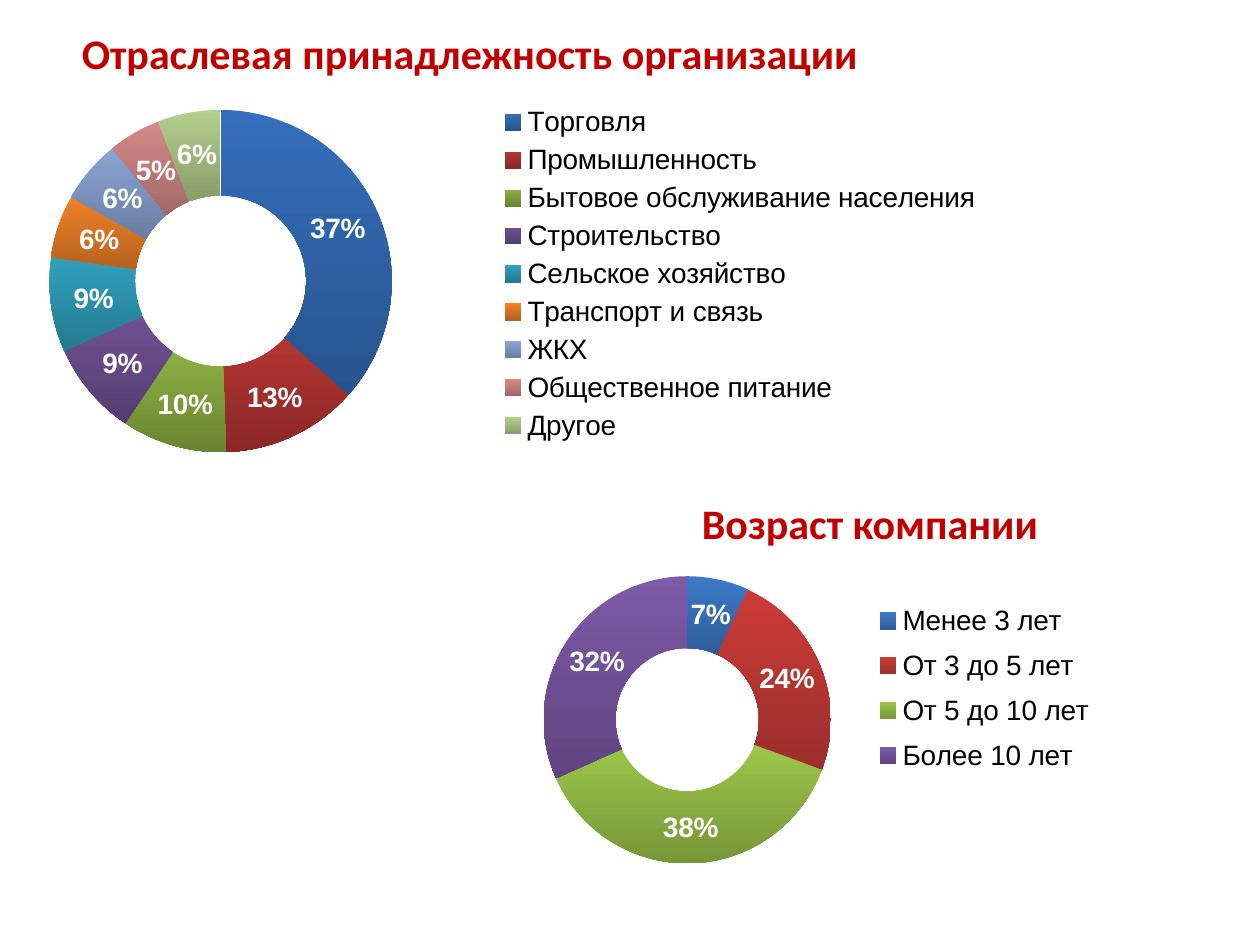
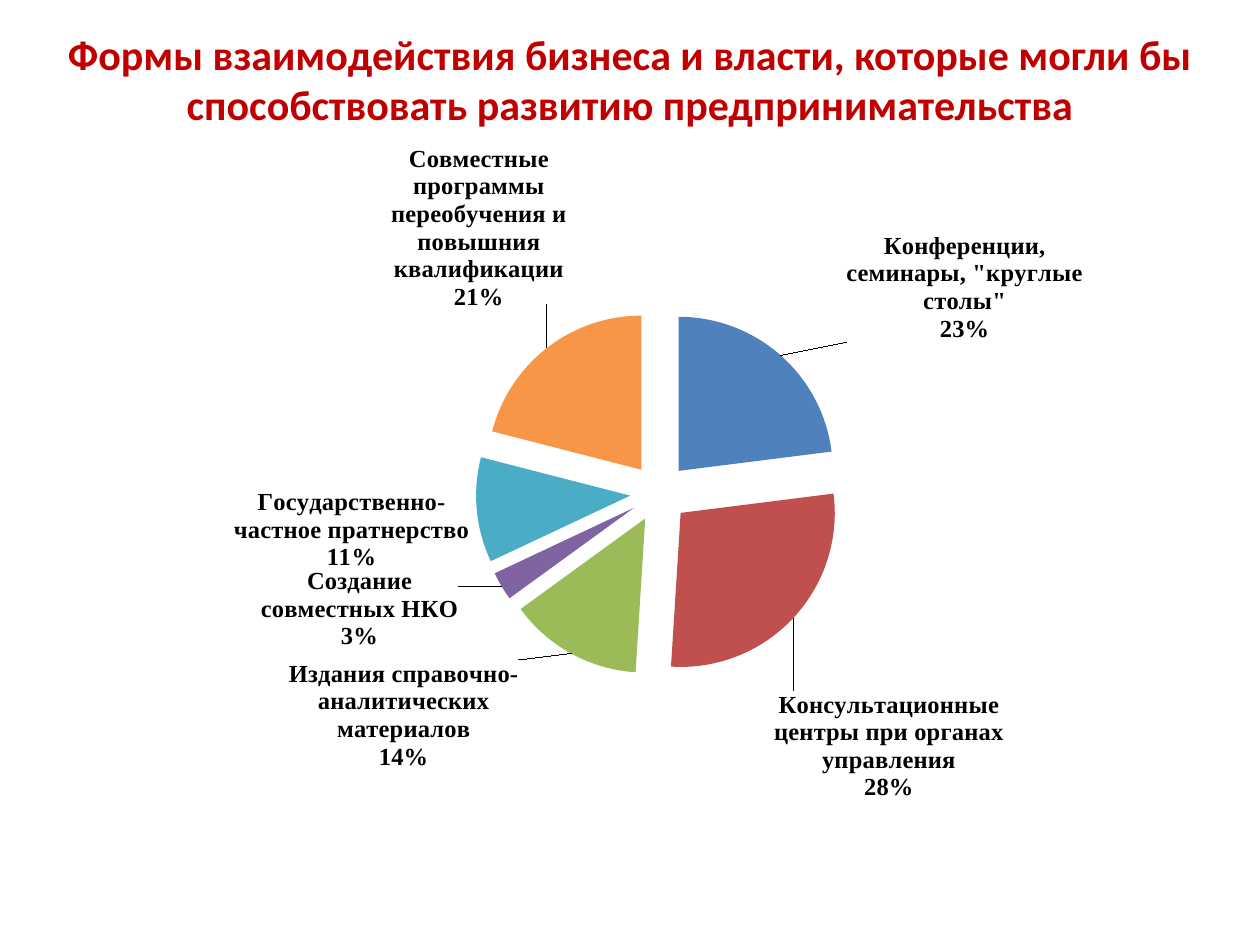
from dataclasses import dataclass

from lxml.etree import SubElement
from pptx import Presentation
from pptx.chart.data import CategoryChartData
from pptx.dml.color import RGBColor
from pptx.enum.chart import XL_CHART_TYPE as ChartType
from pptx.enum.chart import XL_LABEL_POSITION as LabelPosition
from pptx.enum.chart import XL_LEGEND_POSITION as LegendPosition
from pptx.enum.text import MSO_ANCHOR, PP_ALIGN
from pptx.oxml.ns import qn
from pptx.util import Inches, Pt

TITLE_RED = RGBColor(0xC0, 0x00, 0x00)
BLACK = RGBColor(0x00, 0x00, 0x00)
WHITE = RGBColor(0xFF, 0xFF, 0xFF)

INDUSTRY_COLORS = [
    RGBColor(0x35, 0x6E, 0xBB), RGBColor(0xB4, 0x35, 0x32), RGBColor(0x8C, 0xAF, 0x41),
    RGBColor(0x6F, 0x51, 0x94), RGBColor(0x31, 0xA0, 0xBD), RGBColor(0xF0, 0x81, 0x28),
    RGBColor(0x8A, 0xA5, 0xD4), RGBColor(0xD4, 0x8A, 0x88), RGBColor(0xB4, 0xCE, 0x8C),
]
AGE_COLORS = [
    RGBColor(0x3C, 0x7A, 0xC9), RGBColor(0xCC, 0x3C, 0x38),
    RGBColor(0x9C, 0xC6, 0x4A), RGBColor(0x7E, 0x5A, 0xA8),
]
FORM_COLORS = [
    RGBColor(0x4F, 0x81, 0xBD), RGBColor(0xC0, 0x50, 0x4D), RGBColor(0x9B, 0xBB, 0x59),
    RGBColor(0x80, 0x64, 0xA2), RGBColor(0x4B, 0xAC, 0xC6), RGBColor(0xF7, 0x96, 0x46),
]
GRADIENT_SHADE = 0.76  # brightness at the bottom of a ring slice


@dataclass
class Box:
    left: float
    top: float
    width: float
    height: float

    def lengths(self):
        return [Inches(v) for v in (self.left, self.top, self.width, self.height)]

    def fractions(self):
        return dict(x=self.left, y=self.top, w=self.width, h=self.height)


@dataclass
class Ring:
    box: Box
    plot: Box
    legend: Box
    shares: dict[str, int]
    colors: list[RGBColor]


@dataclass
class Form:
    name: str
    share: int
    label_shift: tuple[float, float]


INDUSTRY = Ring(
    Box(0.12, 0.76, 9.06, 2.83), Box(0.02, 0.04, 0.32, 0.96), Box(0.41, 0.01, 0.45, 0.98),
    {"Торговля": 37, "Промышленность": 13, "Бытовое обслуживание населения": 10,
     "Строительство": 9, "Сельское хозяйство": 9, "Транспорт и связь": 6,
     "ЖКХ": 6, "Общественное питание": 5, "Другое": 6},
    INDUSTRY_COLORS,
)
AGE = Ring(
    Box(1.42, 4.1, 7.99, 2.96), Box(0.36, 0.16, 0.29, 0.77), Box(0.68, 0.2, 0.24, 0.52),
    {"Менее 3 лет": 7, "От 3 до 5 лет": 24, "От 5 до 10 лет": 38, "Более 10 лет": 32},
    AGE_COLORS,
)
FORMS = [
    Form('Конференции, семинары, "круглые столы"', 23, (0.05, -0.01)),
    Form("Консультационные центры при органах управления", 28, (-0.02, 0.09)),
    Form("Издания справочно-аналитических материалов", 14, (-0.04, 0)),
    Form("Создание совместных НКО", 3, (-0.03, -0.03)),
    Form("Государственно-частное пратнерство", 11, (0, -0.03)),
    Form("Совместные программы переобучения и повышния квалификации", 21, (0.02, -0.05)),
]


def add_title(slide, text: str, box: Box) -> None:
    frame = slide.shapes.add_textbox(*box.lengths()).text_frame
    frame.word_wrap = True
    frame.vertical_anchor = MSO_ANCHOR.MIDDLE
    paragraph = frame.paragraphs[0]
    paragraph.alignment = PP_ALIGN.CENTER
    run = paragraph.add_run()
    run.text = text
    style_font(run.font, 24, "Calibri", TITLE_RED, bold=True)


def style_font(font, size: int, name: str, color: RGBColor, bold: bool = False) -> None:
    font.size = Pt(size)
    font.name = name
    font.bold = bold
    font.color.rgb = color


def set_layout(parent, index: int, values: dict[str, float], inner: bool = False,
               absolute: bool = True) -> None:
    """Place a chart part by fractions of the chart area."""
    for old in parent.findall(qn("c:layout")):
        parent.remove(old)
    layout = SubElement(parent, qn("c:layout"))
    parent.insert(index, layout)
    manual = SubElement(layout, qn("c:manualLayout"))
    if inner:
        SubElement(manual, qn("c:layoutTarget")).set("val", "inner")
    if absolute:
        for mode in ("xMode", "yMode"):
            SubElement(manual, qn(f"c:{mode}")).set("val", "edge")
    for key, value in values.items():
        SubElement(manual, qn(f"c:{key}")).set("val", str(value))


def add_share_chart(slide, kind: ChartType, box: Box, plot: Box, shares: dict[str, int]):
    data = CategoryChartData()
    data.categories = list(shares)
    data.add_series("Series 1", list(shares.values()))
    chart = slide.shapes.add_chart(kind, *box.lengths(), data).chart
    chart.has_title = False
    chart.has_legend = False
    chart.plots[0].vary_by_categories = True
    plot_area = chart.plots[0]._element.getparent()
    set_layout(plot_area, 0, plot.fractions(), inner=True)
    return chart


def show_percent(labels) -> None:
    labels.show_value = False
    labels.show_percentage = True
    labels.number_format = "0%"
    labels.number_format_is_linked = False


def darken(color: RGBColor) -> RGBColor:
    return RGBColor(*(round(channel * GRADIENT_SHADE) for channel in color))


def add_ring(slide, ring: Ring) -> None:
    chart = add_share_chart(slide, ChartType.DOUGHNUT, ring.box, ring.plot, ring.shares)
    style_font(chart.font, 16, "Arial", BLACK)
    chart.has_legend = True
    chart.legend.position = LegendPosition.RIGHT
    chart.legend.include_in_layout = False
    set_layout(chart.legend._element, 1, ring.legend.fractions())

    series = chart.plots[0].series[0]
    for index, color in enumerate(ring.colors):
        slice_format = series.points[index].format
        slice_format.line.fill.background()
        fill = slice_format.fill
        fill.gradient()
        fill.gradient_angle = 270
        for stop, stop_color in zip(fill.gradient_stops, (color, darken(color))):
            stop.color.rgb = stop_color
    show_percent(series.data_labels)
    style_font(series.data_labels.font, 16, "Arial", WHITE, bold=True)


def add_forms_pie(slide) -> None:
    shares = {form.name: form.share for form in FORMS}
    chart = add_share_chart(slide, ChartType.PIE, Box(0.2, 1.15, 9.68, 5.94),
                            Box(0.27, 0.22, 0.5, 0.49), shares)
    style_font(chart.font, 18, "Calibri", BLACK)
    series = chart.plots[0].series[0]

    # Slices and their label text
    for index, color in enumerate(FORM_COLORS):
        point = series.points[index]
        point.format.fill.solid()
        point.format.fill.fore_color.rgb = color
        point.format.line.fill.background()
        point.data_label.position = LabelPosition.OUTSIDE_END
        style_font(point.data_label.font, 14, "Times New Roman", BLACK, bold=True)
    labels = series.data_labels
    show_percent(labels)
    labels.show_category_name = True
    labels.position = LabelPosition.OUTSIDE_END
    style_font(labels.font, 14, "Times New Roman", BLACK, bold=True)

    # Label contents and shifts from the default places
    for form, label in zip(FORMS, series._element.iter(qn("c:dLbl"))):
        set_layout(label, 1, dict(zip("xy", form.label_shift)), absolute=False)
        label.find(qn("c:showVal")).set("val", "0")
        for flag in ("showCatName", "showPercent"):
            label.find(qn(f"c:{flag}")).set("val", "1")
        SubElement(label, qn("c:separator")).text = "\n"
        next(label.iter(qn("a:bodyPr"))).set("wrap", "square")

    # Pull the slices apart
    explosion = SubElement(series._element, qn("c:explosion"))
    explosion.set("val", "19")
    series._element.find(qn("c:dPt")).addprevious(explosion)


def main() -> None:
    presentation = Presentation()
    presentation.slide_width = Inches(10)
    presentation.slide_height = Inches(7.5)
    blank = presentation.slide_layouts[6]

    # Slide 1: industry and company age
    slide = presentation.slides.add_slide(blank)
    add_ring(slide, INDUSTRY)
    add_title(slide, "Отраслевая принадлежность организации", Box(0, 0, 7.46, 0.83))
    add_ring(slide, AGE)
    add_title(slide, "Возраст компании", Box(3.9, 3.79, 6.01, 0.71))

    # Slide 2: forms of cooperation
    slide = presentation.slides.add_slide(blank)
    add_title(slide, "Формы взаимодействия бизнеса и власти, которые могли бы "
              "способствовать развитию предпринимательства", Box(0, 0, 10, 1.25))
    add_forms_pie(slide)

    presentation.save("out.pptx")


if __name__ == "__main__":
    main()
